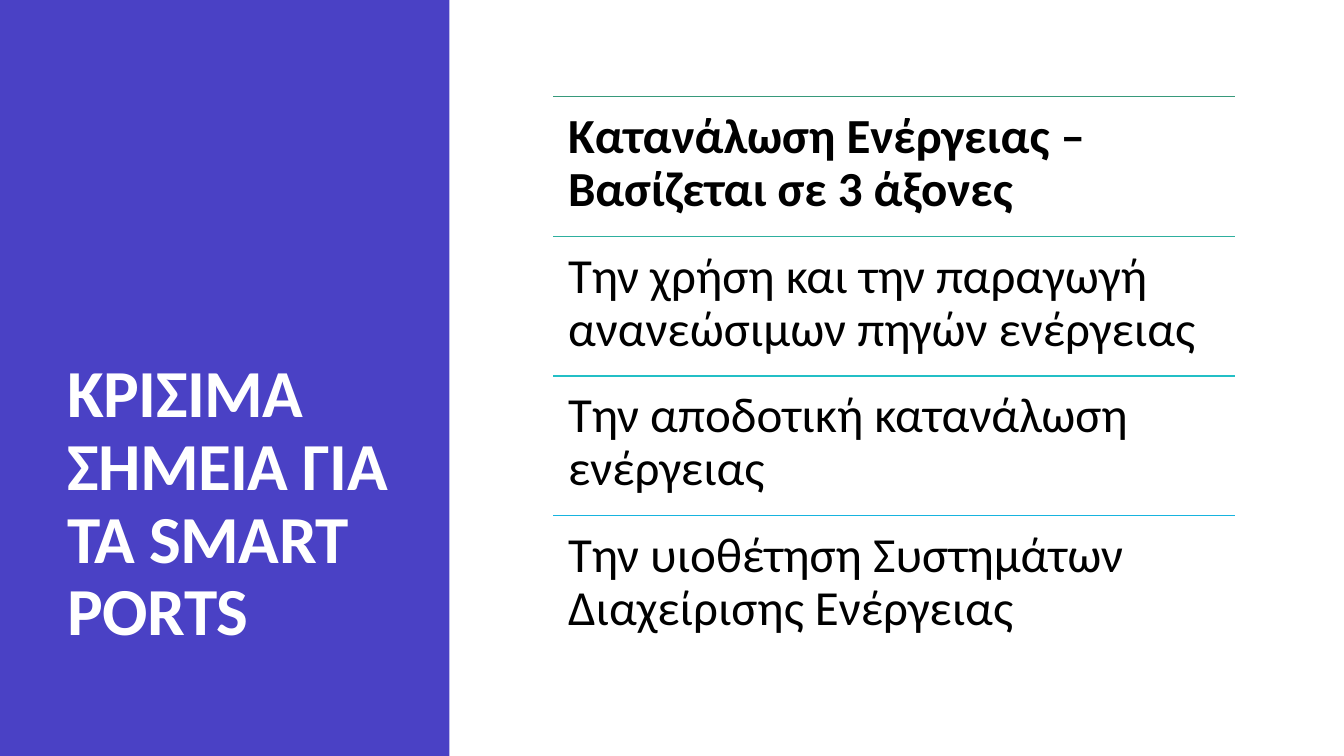
from dataclasses import dataclass

from pptx import Presentation
from pptx.dml.color import RGBColor
from pptx.enum import shapes, text
from pptx.oxml import ns, xmlchemy
from pptx.slide import Slide
from pptx.text.text import _Paragraph as Para
from pptx.util import Pt

HUES = {
    "panel": "4A41C5", "white": "FFFFFF", "black": "000000",
    "green": "37997B", "teal": "2EAF9E", "aqua": "23BFC6", "sky": "17B4DF",
}
FACE = "Calibri"
LEFT, TOP, WIDTH, STEP = 395.3, 69, 486.7, 99.75


@dataclass
class Item:
    words: str
    hue: str
    bold: bool = False


ITEMS = [
    Item("Κατανάλωση Ενέργειας – Βασίζεται σε 3 άξονες", "green", True),
    Item("Την χρήση και την παραγωγή ανανεώσιμων πηγών ενέργειας", "teal"),
    Item("Την αποδοτική κατανάλωση ενέργειας", "aqua"),
    Item("Την υιοθέτηση Συστημάτων Διαχείρισης Ενέργειας", "sky"),
]


def tint(name: str) -> RGBColor:
    return RGBColor.from_string(HUES[name])


def add_text(slide: Slide, box: tuple[float, float, float, float], words: str,
             size: float, hue: str, bold: bool, pad: tuple[float, float],
             anchor: text.MSO_ANCHOR) -> Para:
    frame = slide.shapes.add_textbox(*map(Pt, box)).text_frame
    frame.word_wrap = True
    frame.vertical_anchor = anchor
    frame.margin_left = frame.margin_right = Pt(pad[0])
    frame.margin_top = frame.margin_bottom = Pt(pad[1])
    para = frame.paragraphs[0]
    para.add_run().text = words
    para.line_spacing = 0.9
    font = para.font
    font.name, font.size, font.bold = FACE, Pt(size), bold
    font.color.rgb = tint(hue)
    return para


def add_item(slide: Slide, item: Item, top: float) -> None:
    rule = slide.shapes.add_connector(
        shapes.MSO_CONNECTOR.STRAIGHT,
        Pt(LEFT), Pt(top), Pt(LEFT + WIDTH), Pt(top))
    rule.line.color.rgb = tint(item.hue)
    rule.line.width = Pt(1)
    rule._element.spPr.append(xmlchemy.OxmlElement("a:effectLst"))
    add_text(slide, (LEFT, top, WIDTH, STEP), item.words, 35, "black",
             item.bold, (10.5, 10.5), text.MSO_ANCHOR.TOP)


def main() -> None:
    deck = Presentation()
    deck.slide_width, deck.slide_height = Pt(960), Pt(540)
    slide = deck.slides.add_slide(deck.slide_layouts[6])

    # Side panel
    panel = slide.shapes.add_shape(
        shapes.MSO_SHAPE.RECTANGLE, Pt(0), Pt(0), Pt(321), Pt(540))
    panel.shadow.inherit = False
    panel.fill.solid()
    panel.fill.fore_color.rgb = tint("panel")
    panel.line.fill.background()

    # Title, with slightly tight letters
    title = add_text(slide, (41, 36.7, 248.4, 431.3),
                     "ΚΡΙΣΙΜΑ ΣΗΜΕΙΑ ΓΙΑ ΤΑ SMART PORTS", 48, "white",
                     True, (7.2, 3.6), text.MSO_ANCHOR.BOTTOM)
    title.runs[0]._r.get_or_add_rPr().set("spc", "-40")

    # Ruled list
    for row, item in enumerate(ITEMS):
        add_item(slide, item, TOP + row * STEP)

    deck.save("out.pptx")


if __name__ == "__main__":
    main()
